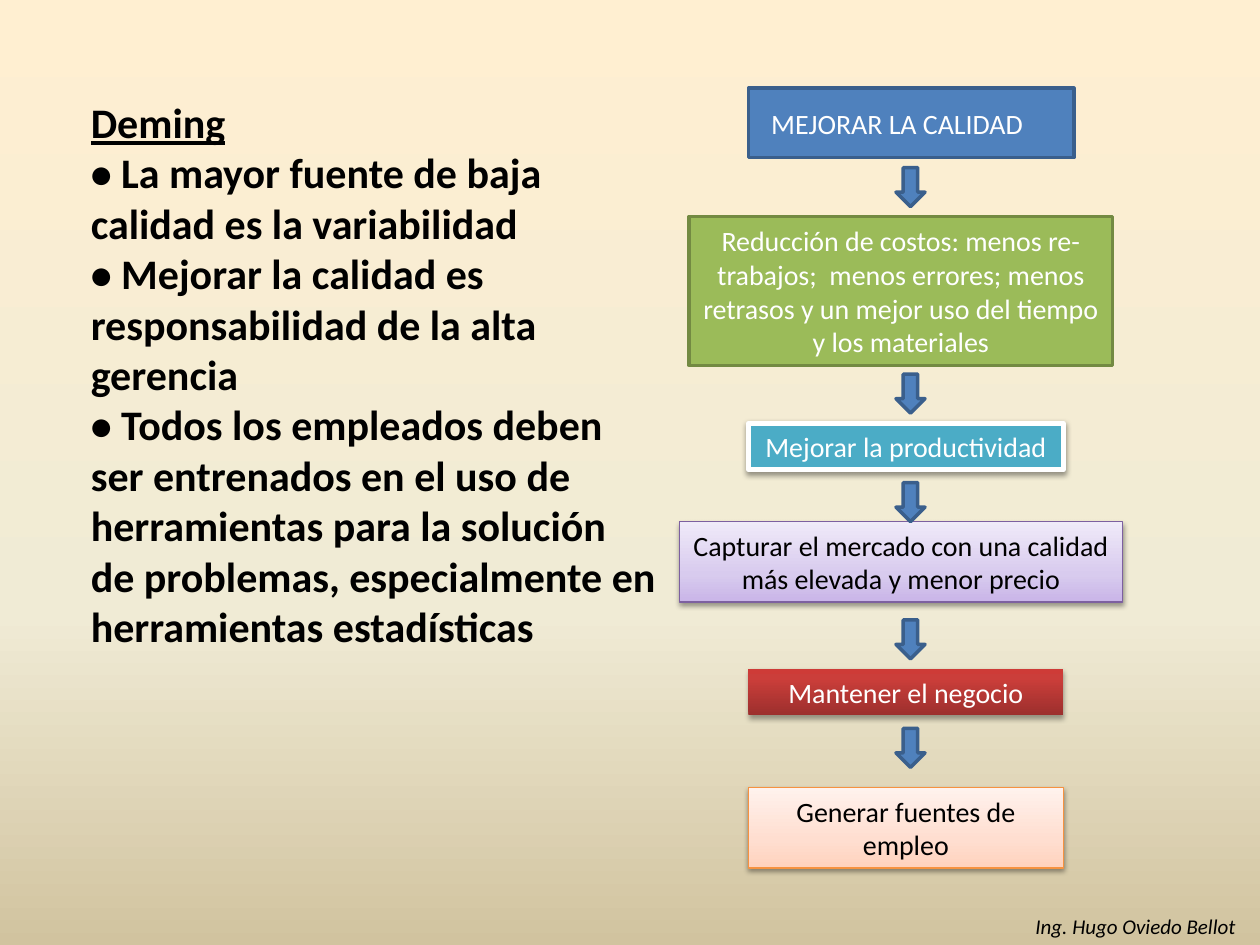
from dataclasses import dataclass
from typing import Optional

from lxml import etree
from pptx import Presentation
from pptx.dml.color import RGBColor
from pptx.enum.shapes import MSO_SHAPE
from pptx.enum.text import MSO_ANCHOR, PP_ALIGN
from pptx.oxml.ns import qn
from pptx.util import Pt

RECTANGLE, DOWN_ARROW = MSO_SHAPE.RECTANGLE, MSO_SHAPE.DOWN_ARROW
LEFT, CENTER = PP_ALIGN.LEFT, PP_ALIGN.CENTER
TOP, MIDDLE = MSO_ANCHOR.TOP, MSO_ANCHOR.MIDDLE
BLANK_LAYOUT = 6

Stops = tuple[tuple[int, str], ...]


@dataclass(frozen=True)
class Theme:
    font: str = "Calibri"
    body_size: float = 24
    step_size: float = 16
    credit_size: float = 12
    black: str = "000000"
    white: str = "FFFFFF"
    blue: str = "4F81BD"
    blue_edge: str = "3A5F8C"
    green: str = "9BBB59"
    green_edge: str = "738A42"
    aqua: str = "4BACC6"
    purple_edge: str = "7D60A0"
    orange_edge: str = "F69240"
    sand: Stops = ((0, "FFEFD1"), (65, "F0EBD5"), (100, "D1C39F"))
    purple: Stops = ((0, "C9B5E8"), (35, "D8CBEE"), (100, "F0EAF9"))
    red: Stops = ((0, "9C2F2D"), (80, "CB3E3A"), (100, "CE3B37"))
    orange: Stops = ((0, "FFD2BD"), (35, "FFDED0"), (100, "FFF2ED"))


THEME = Theme()


@dataclass(frozen=True)
class Box:
    left: float
    top: float
    width: float
    height: float

    def lengths(self) -> tuple:
        return Pt(self.left), Pt(self.top), Pt(self.width), Pt(self.height)


@dataclass(frozen=True)
class Shadow:
    opacity: int
    distance: float
    blur: float = 3.1


SOFT = Shadow(38, 1.6)
DEEP = Shadow(35, 1.8)


@dataclass(frozen=True)
class Step:
    label: str
    box: Box
    fill: str | Stops
    edge: Optional[str]
    edge_width: float = 2
    shadow: Optional[Shadow] = None
    color: str = THEME.white
    align: PP_ALIGN = CENTER
    inset: float = 7.2


STEPS = (
    Step("MEJORAR LA CALIDAD", Box(427.7, 50.4, 186, 39.6),
         THEME.blue, THEME.blue_edge, align=LEFT, inset=13),
    Step("Reducción de costos: menos re-trabajos;  menos errores; menos retrasos "
         "y un mejor uso del tiempo y los materiales",
         Box(393.8, 123.8, 242, 85), THEME.green, THEME.green_edge),
    Step("Mejorar la productividad", Box(427.7, 241.9, 180, 26.6),
         THEME.aqua, THEME.white, 3, SOFT),
    Step("Capturar el mercado con una calidad más elevada y menor precio",
         Box(388.1, 298.1, 253.5, 46), THEME.purple, THEME.purple_edge,
         0.75, SOFT, THEME.black),
    Step("Mantener el negocio", Box(427.7, 382.3, 180, 26.6),
         THEME.red, None, shadow=DEEP),
    Step("Generar fuentes de empleo", Box(427.7, 450, 180, 46),
         THEME.orange, THEME.orange_edge, 0.75, SOFT, THEME.black),
)
ARROW_TOPS = (95.8, 213.8, 275.8, 354.2, 416.2)

DEMING_POINTS = (
    "• La mayor fuente de baja calidad es la variabilidad",
    "• Mejorar la calidad es responsabilidad de la alta gerencia",
    "• Todos los empleados deben ser entrenados en el uso de herramientas para la "
    "solución de problemas, especialmente en herramientas estadísticas",
)


def apply_gradient(owner, fill, stops: Stops, angle: int) -> None:
    """Fill with the stops; the angle runs counter-clockwise from left to right."""
    fill.gradient()
    fill.gradient_angle = angle
    stop_list = next(owner.element.iter(qn("a:gsLst")))
    for default_stop in list(stop_list):
        stop_list.remove(default_stop)
    for percent, color in stops:
        stop = etree.SubElement(stop_list, qn("a:gs"), pos=str(percent * 1000))
        etree.SubElement(stop, qn("a:srgbClr"), val=color)


def add_shadow(shape, shadow: Shadow) -> None:
    effects = next(shape.element.iter(qn("a:effectLst")))
    outer = etree.SubElement(
        effects, qn("a:outerShdw"), blurRad=str(Pt(shadow.blur)),
        dist=str(Pt(shadow.distance)), dir="5400000", rotWithShape="0")
    color = etree.SubElement(outer, qn("a:srgbClr"), val=THEME.black)
    etree.SubElement(color, qn("a:alpha"), val=str(shadow.opacity * 1000))


def add_block(slide, kind: MSO_SHAPE, box: Box, fill: str | Stops,
              edge: Optional[str], edge_width: float = 2):
    block = slide.shapes.add_shape(kind, *box.lengths())
    block.shadow.inherit = False
    if isinstance(fill, str):
        block.fill.solid()
        block.fill.fore_color.rgb = RGBColor.from_string(fill)
    else:
        apply_gradient(block, block.fill, fill, 90)
    if edge:
        block.line.color.rgb = RGBColor.from_string(edge)
        block.line.width = Pt(edge_width)
    else:
        block.line.fill.background()
    return block


def write(frame, lines: tuple[str, ...], size: float, color: str = THEME.black,
          align: PP_ALIGN = LEFT, anchor: MSO_ANCHOR = TOP,
          bold: bool = False, italic: bool = False) -> None:
    frame.word_wrap = True
    frame.vertical_anchor = anchor
    frame.text = "\n".join(lines)
    for paragraph in frame.paragraphs:
        paragraph.alignment = align
        font = paragraph.font
        font.name, font.size = THEME.font, Pt(size)
        font.bold, font.italic = bold, italic
        font.color.rgb = RGBColor.from_string(color)


def add_step(slide, step: Step) -> None:
    block = add_block(slide, RECTANGLE, step.box, step.fill, step.edge, step.edge_width)
    if step.shadow:
        add_shadow(block, step.shadow)
    block.text_frame.margin_left = Pt(step.inset)
    write(block.text_frame, (step.label,), THEME.step_size, step.color,
          step.align, MIDDLE)


def main() -> None:
    deck = Presentation()
    deck.slide_width, deck.slide_height = Pt(720), Pt(540)
    slide = deck.slides.add_slide(deck.slide_layouts[BLANK_LAYOUT])
    apply_gradient(slide, slide.background.fill, THEME.sand, 270)

    deming = slide.shapes.add_textbox(*Box(44.8, 51.6, 337.7, 356).lengths()).text_frame
    write(deming, ("Deming", *DEMING_POINTS), THEME.body_size, bold=True)
    deming.paragraphs[0].font.underline = True

    for step in STEPS:
        add_step(slide, step)
    for top in ARROW_TOPS:
        add_block(slide, DOWN_ARROW, Box(512, top, 16.6, 22.3),
                  THEME.blue, THEME.blue_edge)

    credit = slide.shapes.add_textbox(*Box(584.6, 518.4, 135.4, 21.6).lengths())
    write(credit.text_frame, ("Ing. Hugo Oviedo Bellot",), THEME.credit_size, italic=True)
    deck.save("out.pptx")


if __name__ == "__main__":
    main()
